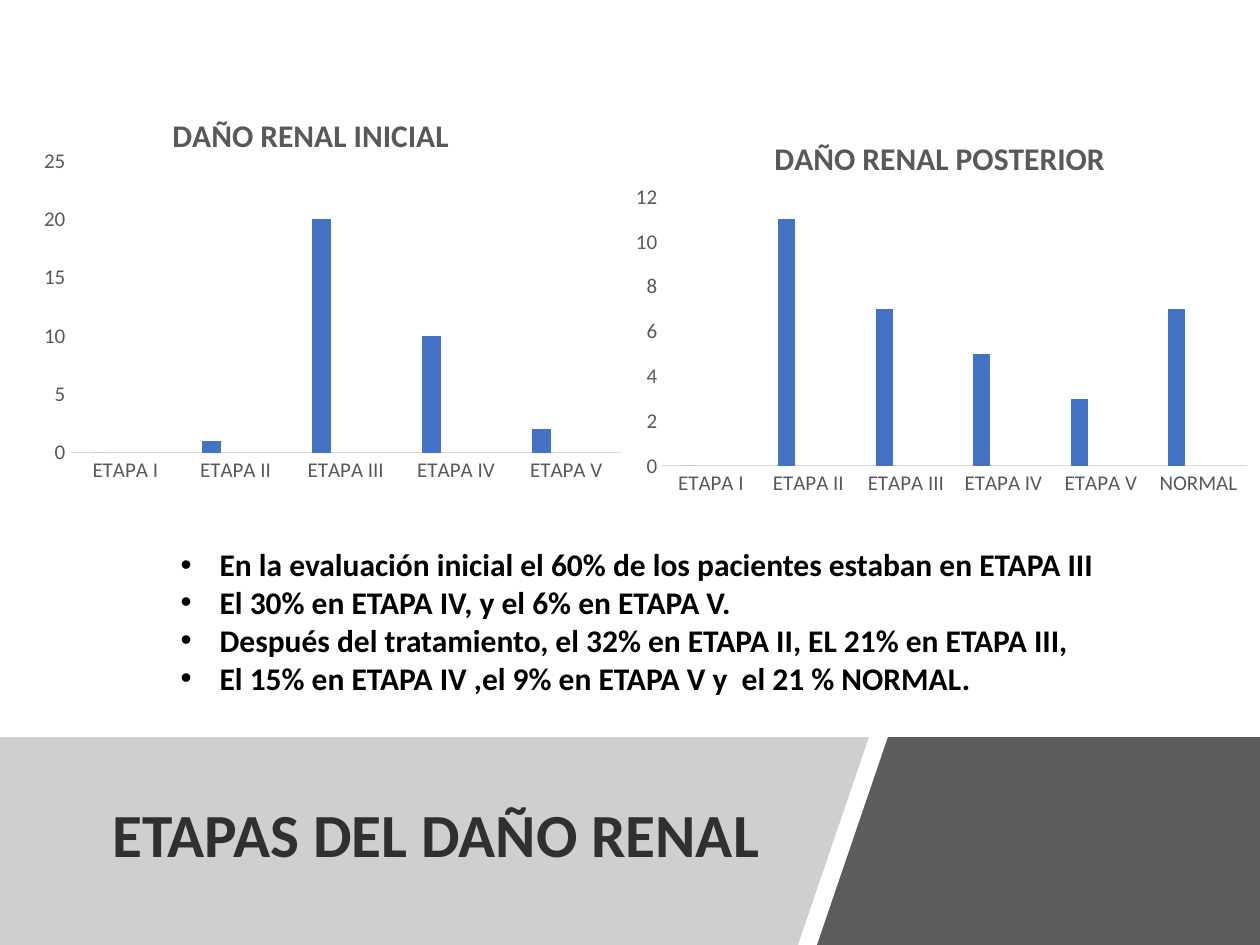
from dataclasses import dataclass

from lxml.etree import SubElement
from pptx import Presentation
from pptx.chart.data import CategoryChartData
from pptx.dml.color import RGBColor as RGB
from pptx.enum.chart import XL_CHART_TYPE as ChartType, XL_TICK_MARK as Tick
from pptx.enum.text import MSO_ANCHOR as Anchor, MSO_AUTO_SIZE as AutoSize, PP_ALIGN as Align
from pptx.oxml import parse_xml
from pptx.oxml.ns import nsdecls, qn
from pptx.util import Emu, Pt

SCALE = 914400 / 126


@dataclass(frozen=True)
class Theme:
    font: str = "Calibri"
    band: str = "D0CECE"
    corner: str = "404040"
    title: str = "303030"
    body: str = "000000"
    label: str = "595959"
    axis: str = "D9D9D9"
    series: tuple = ("4472C4", "ED7D31", "A5A5A5")
    title_size: int = 35
    body_size: int = 18
    chart_title_size: int = 18
    label_size: int = 12


THEME = Theme()

BULLETS = (
    "En la evaluación inicial el 60% de los pacientes estaban en ETAPA III",
    "El 30% en ETAPA IV, y el 6% en ETAPA V.",
    "Después del tratamiento, el 32% en ETAPA II, EL 21% en ETAPA III,",
    "El 15% en ETAPA IV ,el 9% en ETAPA V y  el 21 % NORMAL.",
)
STAGES = ("ETAPA I", "ETAPA II", "ETAPA III", "ETAPA IV", "ETAPA V")


def px(n):
    return Emu(round(n * SCALE))


def style_font(font, size, color, bold=False):
    font.name, font.size, font.bold = THEME.font, Pt(size), bold
    font.color.rgb = RGB.from_string(color)


def place(sp, box):
    sp.left, sp.top, sp.width, sp.height = map(px, box)


def add_polygon(slide, points, color, alpha=None):
    builder = slide.shapes.build_freeform(*points[0], scale=SCALE)
    builder.add_line_segments(points[1:], close=True)
    sp = builder.convert_to_shape()
    sp.shadow.inherit = False
    sp.line.fill.background()
    sp.fill.solid()
    sp.fill.fore_color.rgb = RGB.from_string(color)
    if alpha:
        clr = sp.fill._xPr.find(qn("a:solidFill"))[0]
        SubElement(clr, qn("a:alpha")).set("val", str(alpha * 1000))


def set_title(slide, text, box):
    sp = slide.shapes.title
    place(sp, box)
    slide.shapes._spTree.append(sp._element)  # bring in front of the bands
    tf = sp.text_frame
    tf.text = text
    tf.vertical_anchor = Anchor.MIDDLE
    p = tf.paragraphs[0]
    p.alignment, p.line_spacing = Align.CENTER, 0.9
    style_font(p.font, THEME.title_size, THEME.title, True)


def set_bullets(slide, lines, box, indent):
    sp = slide.placeholders[1]
    place(sp, box)
    tf = sp.text_frame
    tf.text = "\n".join(lines)
    tf.word_wrap, tf.auto_size = True, AutoSize.NONE
    for p in tf.paragraphs:
        p.space_before = Pt(0)
        style_font(p.font, THEME.body_size, THEME.body, True)
        pPr = p._p.get_or_add_pPr()
        pPr.set("marL", str(px(indent)))
        pPr.set("indent", str(-px(indent)))
        pPr.insert_element_before(
            parse_xml(f'<a:buChar {nsdecls("a")} char="•"/>'), "a:tabLst", "a:defRPr")


def manual_layout(parent, inner=False, **fractions):
    for old in parent.findall(qn("c:layout")):
        parent.remove(old)
    target = '<c:layoutTarget val="inner"/>' if inner else ""
    modes = "".join(f'<c:{k}Mode val="edge"/>' for k in "xy")
    values = "".join(f'<c:{k} val="{v}"/>' for k, v in fractions.items())
    layout = parse_xml(f'<c:layout {nsdecls("c")}><c:manualLayout>{target}{modes}'
                       f'{values}</c:manualLayout></c:layout>')
    tx = parent.find(qn("c:tx"))
    parent.insert(0 if tx is None else 1, layout)


def add_column_chart(slide, title, cats, values, box, plot_box, title_at, top, step):
    data = CategoryChartData()
    data.categories = cats
    data.add_series("Series 1", values)
    for name in ("Series 2", "Series 3"):
        data.add_series(name, [None] * len(cats))
    chart = slide.shapes.add_chart(
        ChartType.COLUMN_CLUSTERED, *map(px, box), data).chart
    chart.has_legend = False
    style_font(chart.font, THEME.label_size, THEME.label)

    # Chart title
    chart.has_title = True
    tf = chart.chart_title.text_frame
    tf.text = title
    style_font(tf.paragraphs[0].font, THEME.chart_title_size, THEME.label, True)

    # Columns
    plot = chart.plots[0]
    plot.gap_width, plot.overlap, plot.vary_by_categories = 219, -27, False
    for series, color in zip(plot.series, THEME.series):
        series.format.fill.solid()
        series.format.fill.fore_color.rgb = RGB.from_string(color)

    # Axes
    for axis in (chart.category_axis, chart.value_axis):
        axis.major_tick_mark = axis.minor_tick_mark = Tick.NONE
        axis.has_major_gridlines = False
        style_font(axis.tick_labels.font, THEME.label_size, THEME.label)
    line = chart.category_axis.format.line
    line.color.rgb, line.width = RGB.from_string(THEME.axis), Pt(0.75)
    axis = chart.value_axis
    axis.format.line.fill.background()
    axis.minimum_scale, axis.maximum_scale, axis.major_unit = 0, top, step

    # Title and plot positions, as fractions of the chart
    left, upper, width, height = box
    x, y, w, h = plot_box
    manual_layout(chart._chartSpace.chart.plotArea, inner=True,
                  x=round((x - left) / width, 3), y=round((y - upper) / height, 3),
                  w=round(w / width, 3), h=round(h / height, 3))
    manual_layout(chart.chart_title._element,
                  x=round((title_at[0] - left) / width, 3),
                  y=round((title_at[1] - upper) / height, 3))


def main():
    prs = Presentation()
    prs.slide_width, prs.slide_height = px(1260), px(945)
    slide = prs.slides.add_slide(prs.slide_layouts[1])

    # Bottom bands and title
    add_polygon(slide, [(0, 737), (869, 737), (798, 945), (0, 945)], THEME.band)
    set_title(slide, "ETAPAS DEL DAÑO RENAL", (87, 762, 698, 151))
    add_polygon(slide, [(888, 737), (1260, 737), (1260, 945), (817, 945)],
                THEME.corner, alpha=85)

    # Findings
    set_bullets(slide, BULLETS, (168, 539, 946, 165), indent=39)

    # Charts before and after treatment
    add_column_chart(slide, "DAÑO RENAL INICIAL", STAGES, (0, 1, 20, 10, 2),
                     (0, 84, 622, 420), (70, 161, 551, 292), (167, 108), 25, 5)
    add_column_chart(slide, "DAÑO RENAL POSTERIOR", STAGES + ("NORMAL",),
                     (0, 11, 7, 5, 3, 7),
                     (622, 108, 638, 396), (662, 197, 585, 269), (769, 131), 12, 2)

    prs.save("out.pptx")


if __name__ == "__main__":
    main()
